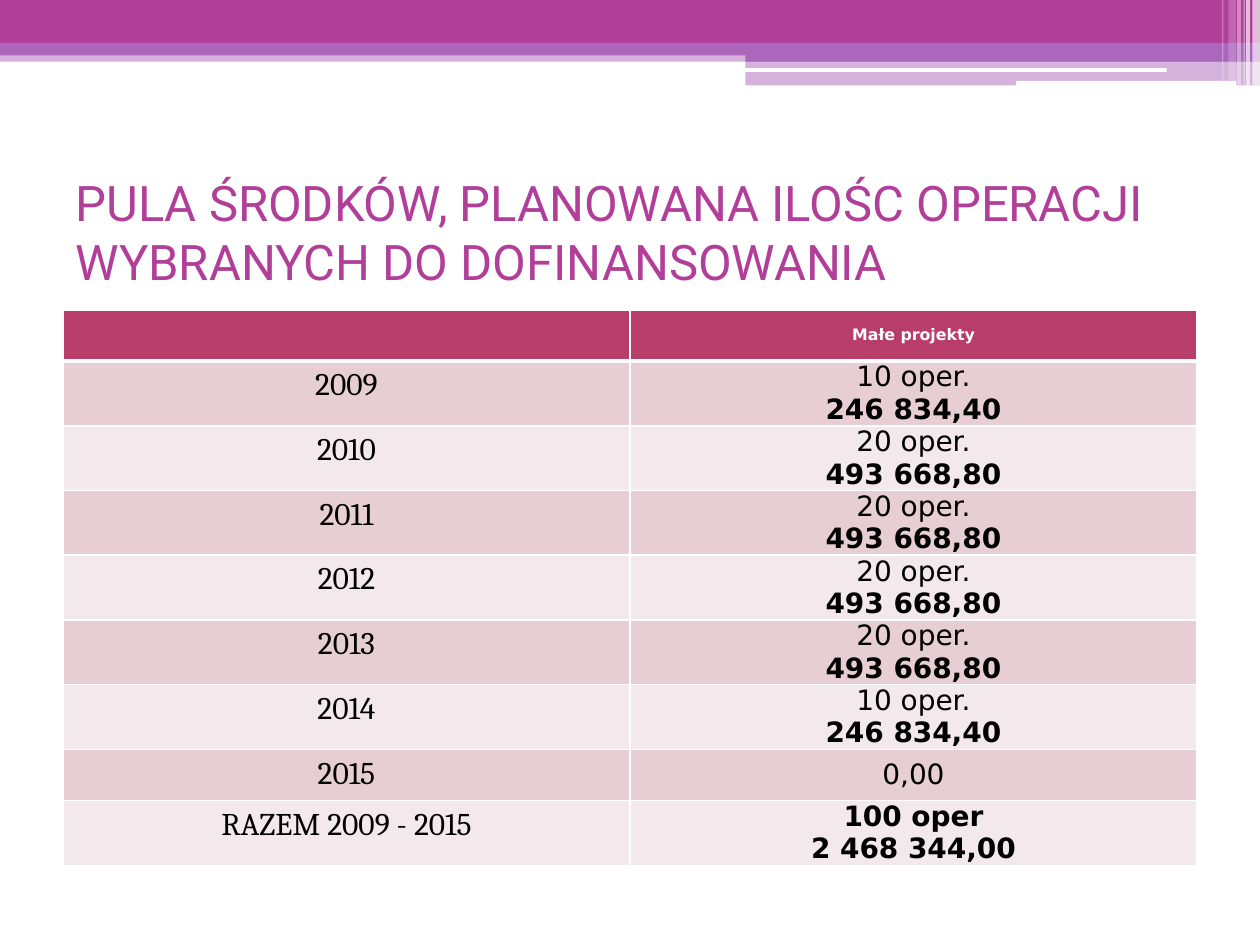
"""Build the slide showing yearly funds and planned operations for small projects."""
from lxml.etree import SubElement
from pptx import Presentation
from pptx.dml.color import RGBColor
from pptx.enum.shapes import MSO_SHAPE as Shape
from pptx.enum.text import MSO_ANCHOR as Anchor, PP_ALIGN as Align
from pptx.oxml.ns import qn
from pptx.util import Pt

COLORS = {
    "magenta": "B13F9A",
    "violet": "AC66BB",
    "white": "FFFFFF",
    "black": "000000",
    "header": "B83D68",
    "dark_band": "E6CED4",
    "light_band": "F3E8EB",
}
TITLE = "PULA ŚRODKÓW, PLANOWANA ILOŚC OPERACJI WYBRANYCH DO DOFINANSOWANIA"
BANNER = [
    (0, 28.8, 720, 6.48, "violet", 50),
    (0, 0, 720, 24.48, "magenta", 100),
    (0, 24.48, 720, 7.2, "violet", 100),
    (426, 28.08, 294, 7.2, "violet", 100),
    (426, 34.8, 294, 14, "violet", 50),
]
ROUNDED_LINES = [(425.5, 39, 241.2, 2.16), (580.5, 46.2, 126, 2.88)]
STRIPES = [
    (715.7, 4.3, 48.8, 65),
    (712.1, 2.16, 48.8, 65),
    (710.6, 0.72, 48.8, 60),
    (707, 2.16, 48.8, 40),
    (702, 4.3, 46.2, 20),
    (698.4, 0.72, 46.2, 30),
]
YEARS = [
    ("2009", "10 oper.", "246 834,40"),
    ("2010", "20 oper.", "493 668,80"),
    ("2011", "20 oper.", "493 668,80"),
    ("2012", "20 oper.", "493 668,80"),
    ("2013", "20 oper.", "493 668,80"),
    ("2014", "10 oper.", "246 834,40"),
    ("2015", "0,00"),
    ("RAZEM 2009 - 2015", "100 oper", "2 468 344,00"),
]
SHORT_ROW, TALL_ROW = 29.2, 37


def rgb(color):
    """Return the named colour."""
    return RGBColor.from_string(COLORS[color])


def add_bar(slide, left, top, width, height, color, opacity=100, kind=Shape.RECTANGLE):
    """Add one borderless bar of the banner."""
    bar = slide.shapes.add_shape(kind, Pt(left), Pt(top), Pt(width), Pt(height))
    bar.shadow.inherit = False
    bar.line.fill.background()
    bar.fill.solid()
    bar.fill.fore_color.rgb = rgb(color)
    if opacity < 100:
        tint = bar.fill._xPr.find(qn("a:solidFill"))[0]
        SubElement(tint, qn("a:alpha"), val=str(opacity * 1000))


def add_banner(slide):
    """Draw the coloured bands, the white lines and the stripes on the right."""
    for band in BANNER:
        add_bar(slide, *band)
    for line in ROUNDED_LINES:
        add_bar(slide, *line, "white", kind=Shape.ROUNDED_RECTANGLE)
    for left, width, height, opacity in STRIPES:
        add_bar(slide, left, 0, width, height, "white", opacity)


def format_run(run, font, size, color, bold=False):
    """Set the character format of a run."""
    run.font.name = font
    run.font.size = Pt(size)
    run.font.bold = bold
    run.font.color.rgb = rgb(color)


def add_title(slide):
    """Fill and place the title placeholder."""
    title = slide.shapes.title
    title.left, title.top, title.width, title.height = Pt(36), Pt(90), Pt(648), Pt(84.24)
    title.text_frame.text = TITLE
    title.text_frame.vertical_anchor = Anchor.MIDDLE
    heading = title.text_frame.paragraphs[0]
    heading.alignment = Align.LEFT
    format_run(heading.runs[0], "Roboto", 28, "magenta")


def style_cell(cell, color, bottom=1):
    """Give a cell its white borders and its fill."""
    properties = cell._tc.get_or_add_tcPr()
    for side, width in (("L", 1), ("R", 1), ("T", 1), ("B", bottom)):
        border = SubElement(properties, qn(f"a:ln{side}"), w=str(Pt(width)))
        paint = SubElement(border, qn("a:solidFill"))
        SubElement(paint, qn("a:srgbClr"), val=COLORS["white"])
    cell.fill.solid()
    cell.fill.fore_color.rgb = rgb(color)


def write_cell(cell, lines, font, size, color="black", bold_from=None):
    """Write centred lines, bold from the given line on."""
    cell.text_frame.text = "\n".join(lines)
    for index, paragraph in enumerate(cell.text_frame.paragraphs):
        paragraph.alignment = Align.CENTER
        bold = bold_from is not None and index >= bold_from
        format_run(paragraph.runs[0], font, size, color, bold)


def center_cell(cell):
    """Centre a cell vertically, with tight margins."""
    cell.vertical_anchor = Anchor.MIDDLE
    cell.margin_left = cell.margin_right = Pt(5)
    cell.margin_top = cell.margin_bottom = 0


def add_funds_table(slide):
    """Add the table of operations and amounts by year."""
    heights = [SHORT_ROW] + [TALL_ROW if len(year) > 2 else SHORT_ROW for year in YEARS]
    funds = slide.shapes.add_table(
        len(heights), 2, Pt(36), Pt(177.12), Pt(648), Pt(sum(heights))
    ).table
    for row, height in zip(funds.rows, heights):
        row.height = Pt(height)
    for column in range(2):
        style_cell(funds.cell(0, column), "header", bottom=3)
    heading = funds.cell(0, 1)
    center_cell(heading)
    write_cell(heading, ["Małe projekty"], "DejaVu Sans", 9, "white", bold_from=0)
    for index, (period, *amounts) in enumerate(YEARS, start=1):
        period_cell, amount_cell = funds.cell(index, 0), funds.cell(index, 1)
        for cell in (period_cell, amount_cell):
            style_cell(cell, "dark_band" if index % 2 else "light_band")
        write_cell(period_cell, [period], "Cambria", 18)
        center_cell(amount_cell)
        is_total = index == len(YEARS)
        write_cell(amount_cell, amounts, "DejaVu Sans", 16, bold_from=0 if is_total else 1)


def main():
    """Build and save the presentation."""
    deck = Presentation()
    deck.slide_width, deck.slide_height = Pt(720), Pt(540)
    slide = deck.slides.add_slide(deck.slide_layouts[5])
    add_banner(slide)
    add_title(slide)
    add_funds_table(slide)
    deck.save("out.pptx")


if __name__ == "__main__":
    main()
